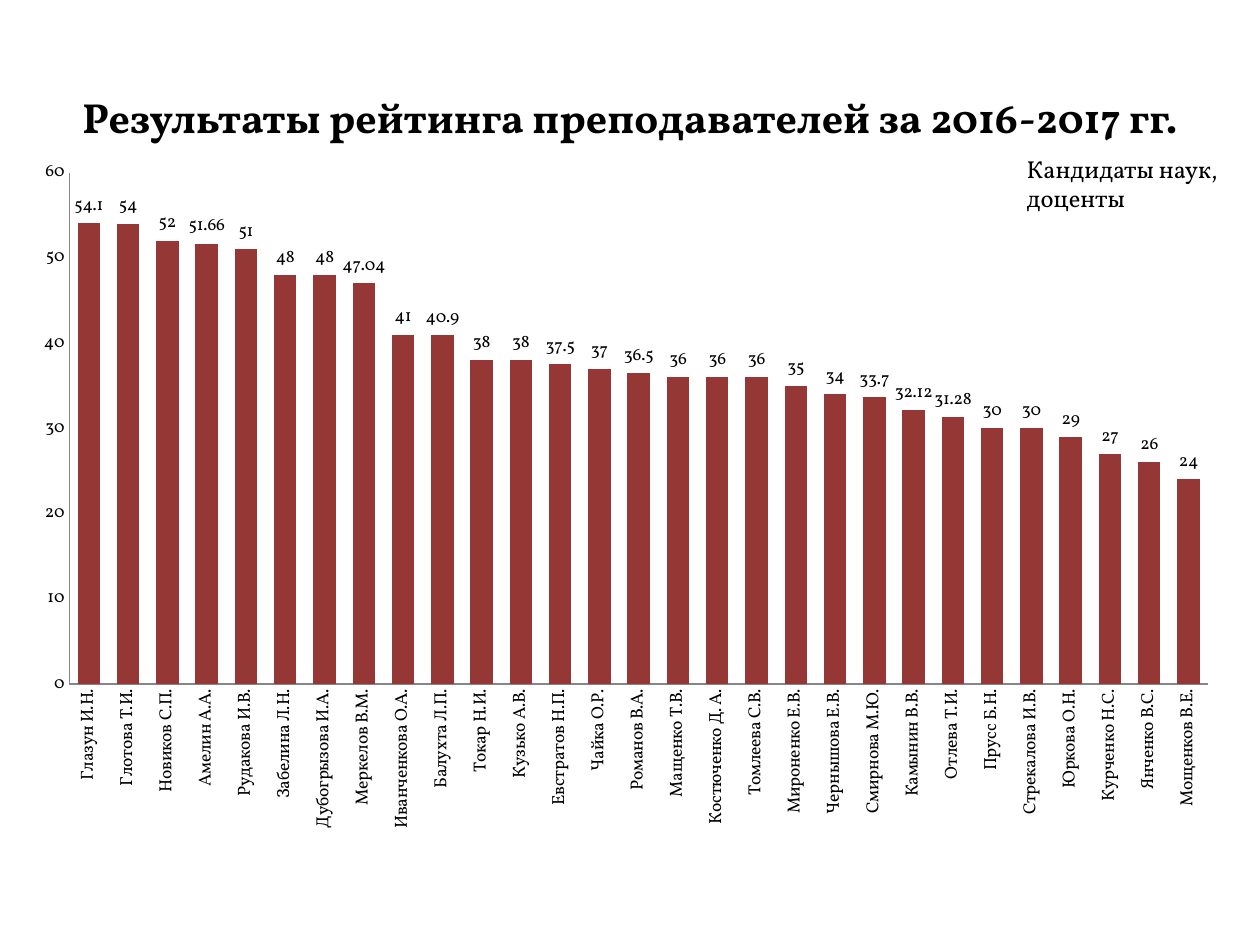
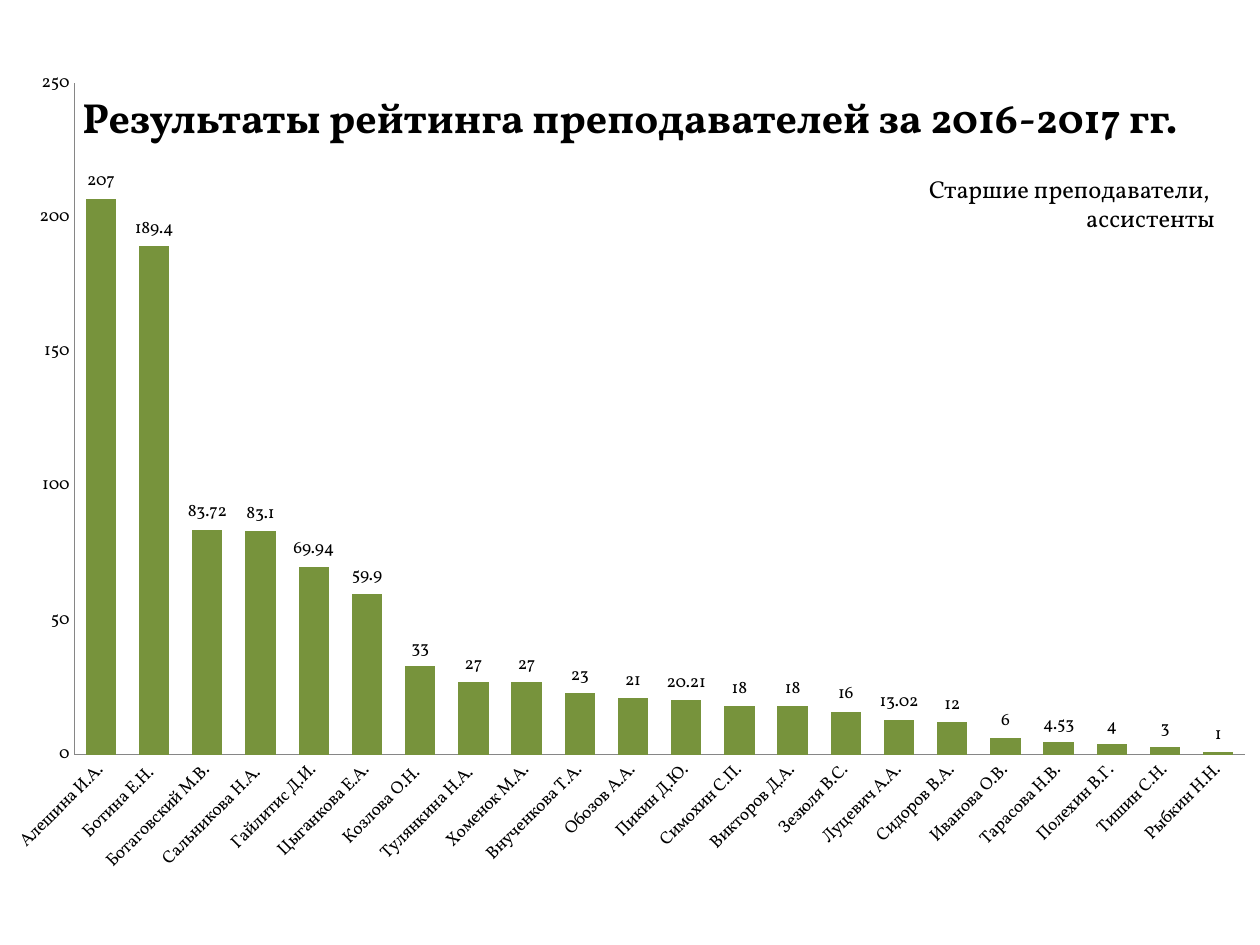
from dataclasses import dataclass

from pptx import Presentation
from pptx.chart.data import CategoryChartData
from pptx.dml.color import RGBColor
from pptx.enum.chart import XL_CHART_TYPE as ChartType
from pptx.enum.chart import XL_LABEL_POSITION as LabelPosition
from pptx.enum.chart import XL_TICK_MARK as TickMark
from pptx.enum.text import MSO_ANCHOR as Anchor
from pptx.enum.text import MSO_AUTO_SIZE as AutoSize
from pptx.enum.text import PP_ALIGN as Align
from pptx.oxml import parse_xml
from pptx.oxml.ns import nsdecls
from pptx.util import Inches, Pt


@dataclass(frozen=True)
class Theme:
    font: str = "Vollkorn"
    text: str = "000000"
    axis: str = "868686"
    docents: str = "953735"
    assistants: str = "77933C"
    title_size: int = 24
    caption_size: int = 14
    chart_size: int = 10


COLUMNS, ROWS = 100, 75
TITLE_ONLY = 5
TITLE = "Результаты рейтинга преподавателей за 2016-2017 гг."
TITLE_AREA = (5, 3, 90, 12.5)

DOCENTS = {
    "Глазун И.Н.": 54.1, "Глотова Т.И.": 54, "Новиков С.П.": 52,
    "Амелин А.А.": 51.66, "Рудакова И.В.": 51, "Забелина Л.Н.": 48,
    "Дубогрызова И.А.": 48, "Меркелов В.М.": 47.04,
    "Иванченкова О.А.": 41, "Балухта Л.П.": 40.9, "Токар Н.И.": 38,
    "Кузько А.В.": 38, "Евстратов Н.П.": 37.5, "Чайка О.Р.": 37,
    "Романов В.А.": 36.5, "Мащенко Т.В.": 36, "Костюченко Д. А.": 36,
    "Томлеева С.В.": 36, "Мироненко Е.В.": 35, "Чернышова Е.В.": 34,
    "Смирнова М.Ю.": 33.7, "Камынин В.В.": 32.12, "Отлева Т.И.": 31.28,
    "Прусс Б.Н.": 30, "Стрекалова И.В.": 30, "Юркова О.Н.": 29,
    "Курченко Н.С.": 27, "Янченко В.С.": 26, "Мощенков В.Е.": 24,
}
ASSISTANTS = {
    "Алешина И.А.": 207, "Ботина Е.Н. ": 189.4, "Ботаговский М.В.": 83.72,
    "Сальникова Н.А. ": 83.1, "Гайлитис Д.И.": 69.94,
    "Цыганкова Е.А.": 59.9, "Козлова О.Н. ": 33, "Тулянкина Н.А. ": 27,
    "Хоменок М.А.": 27, "Внученкова Т.А.": 23, "Обозов А.А.": 21,
    "Пикин Д.Ю.": 20.21, "Симохин С.П.": 18, "Викторов Д.А.": 18,
    "Зезюля В.С.": 16, "Луцевич А.А.": 13.02, "Сидоров В.А.": 12,
    "Иванова О.В.": 6, "Тарасова Н.В.": 4.53, "Полехин В.Г.": 4,
    "Тишин С.Н.": 3, "Рыбкин Н.Н.": 1,
}


def apply_format(target, values):
    for name, value in values.items():
        setattr(target, name, value)


class Deck:
    def __init__(self, theme):
        self.theme = theme
        self.presentation = Presentation()
        apply_format(self.presentation,
                     {"slide_width": Inches(10), "slide_height": Inches(7.5)})
        self.slide = None

    def add_slide(self):
        layout = self.presentation.slide_layouts[TITLE_ONLY]
        self.slide = self.presentation.slides.add_slide(layout)

    def box(self, area):
        """Turn left, top, width, height in grid units into lengths."""
        column = self.presentation.slide_width / COLUMNS
        row = self.presentation.slide_height / ROWS
        return [round(value * unit)
                for value, unit in zip(area, (column, row, column, row))]

    def style_font(self, font, size, bold=False):
        apply_format(font, {"name": self.theme.font, "size": Pt(size),
                            "bold": bold})
        font.color.rgb = RGBColor.from_string(self.theme.text)

    def title(self, text):
        shape = self.slide.shapes.title
        apply_format(shape, dict(zip(("left", "top", "width", "height"),
                                     self.box(TITLE_AREA))))
        shape.text_frame.text = text
        shape.text_frame.vertical_anchor = Anchor.MIDDLE
        paragraph = shape.text_frame.paragraphs[0]
        paragraph.alignment = Align.CENTER
        self.style_font(paragraph.font, self.theme.title_size, bold=True)

    def caption(self, lines, area, alignment):
        frame = self.slide.shapes.add_textbox(*self.box(area)).text_frame
        frame.text = "\n".join(lines)
        apply_format(frame, {"word_wrap": False,
                             "auto_size": AutoSize.SHAPE_TO_FIT_TEXT})
        for paragraph in frame.paragraphs:
            paragraph.alignment = alignment
            self.style_font(paragraph.font, self.theme.caption_size)

    def column_chart(self, ratings, area, plot_area, color, top, step, angle):
        data = CategoryChartData()
        data.categories = list(ratings)
        data.add_series("Series 1", list(ratings.values()))
        chart = self.slide.shapes.add_chart(
            ChartType.COLUMN_CLUSTERED, *self.box(area), data).chart
        apply_format(chart, {"has_legend": False, "has_title": False})
        self.style_font(chart.font, self.theme.chart_size)

        plot = chart.plots[0]
        apply_format(plot, {"gap_width": 75, "vary_by_categories": False,
                            "has_data_labels": True})
        apply_format(plot.data_labels, {"show_value": True,
                                        "position": LabelPosition.OUTSIDE_END})
        fill = plot.series[0].format.fill
        fill.solid()
        fill.fore_color.rgb = RGBColor.from_string(color)

        for axis in (chart.category_axis, chart.value_axis):
            apply_format(axis, {"major_tick_mark": TickMark.NONE,
                                "minor_tick_mark": TickMark.NONE,
                                "has_major_gridlines": False})
            axis.format.line.width = Pt(0.75)
            axis.format.line.color.rgb = RGBColor.from_string(self.theme.axis)
            self.style_font(axis.tick_labels.font, self.theme.chart_size)
        apply_format(chart.value_axis, {"minimum_scale": 0,
                                        "maximum_scale": top,
                                        "major_unit": step})
        label_body = chart.category_axis._element.txPr.bodyPr
        label_body.set("rot", str(angle * 60000))
        label_body.set("vert", "horz")
        self.place_plot(chart, area, plot_area)

    def place_plot(self, chart, area, plot_area):
        """Fix the inner plot, given in the same grid as the chart."""
        left, top, width, height = area
        shares = {"x": (plot_area[0] - left) / width,
                  "y": (plot_area[1] - top) / height,
                  "w": plot_area[2] / width,
                  "h": plot_area[3] / height}
        modes = "".join(f'<c:{name}Mode val="edge"/>' for name in "xy")
        values = "".join(f'<c:{name} val="{share:.4f}"/>'
                         for name, share in shares.items())
        layout = parse_xml(
            f'<c:layout {nsdecls("c")}><c:manualLayout>'
            f'<c:layoutTarget val="inner"/>{modes}{values}'
            '</c:manualLayout></c:layout>')
        plot_element = chart._chartSpace.chart.plotArea
        for old in plot_element.findall(layout.tag):
            plot_element.remove(old)
        plot_element.insert(0, layout)


def main():
    theme = Theme()
    deck = Deck(theme)
    rating_slides = [
        {"caption": {"lines": ["Кандидаты наук,", "доценты"],
                     "area": (80.5, 11.7, 17.5, 5.7),
                     "alignment": Align.LEFT},
         "chart": {"ratings": DOCENTS, "color": theme.docents,
                   "area": (1.6, 11.7, 96.2, 55.2),
                   "plot_area": (5.5, 13.7, 90.4, 40.6),
                   "top": 60, "step": 10, "angle": -90}},
        {"caption": {"lines": ["Старшие преподаватели, ", "ассистенты"],
                     "area": (72.7, 13.3, 24.7, 5.7),
                     "alignment": Align.RIGHT},
         "chart": {"ratings": ASSISTANTS, "color": theme.assistants,
                   "area": (-0.8, 4.3, 101.7, 66.4),
                   "plot_area": (5.9, 6.6, 92.9, 53.3),
                   "top": 250, "step": 50, "angle": -45}},
    ]
    for content in rating_slides:
        deck.add_slide()
        deck.title(TITLE)
        deck.caption(**content["caption"])
        deck.column_chart(**content["chart"])
    deck.presentation.save("out.pptx")


if __name__ == "__main__":
    main()
